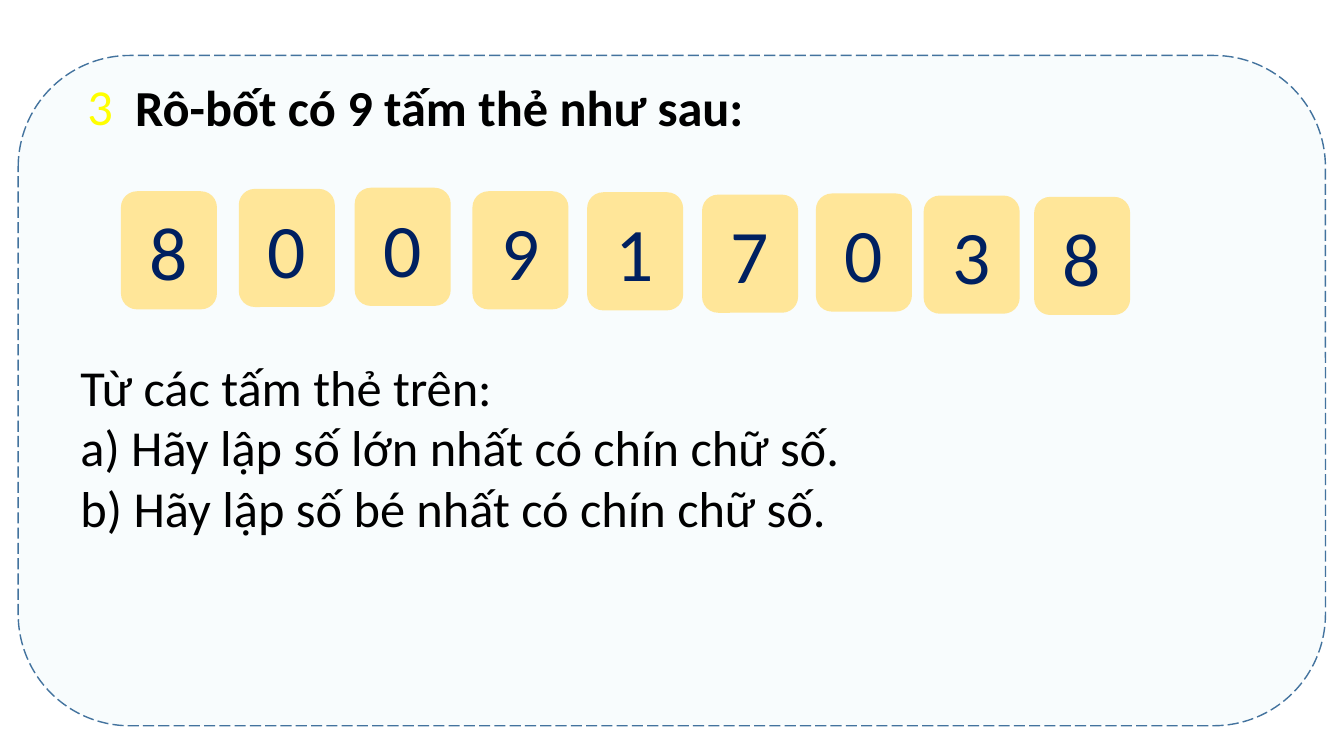
from pptx import Presentation
from pptx.dml.color import RGBColor
from pptx.enum.dml import MSO_LINE
from pptx.enum.shapes import MSO_SHAPE
from pptx.enum.text import MSO_ANCHOR, MSO_AUTO_SIZE, PP_ALIGN
from pptx.util import Pt

FONT = "Calibri"
BLACK = RGBColor(0x00, 0x00, 0x00)
YELLOW = RGBColor(0xFF, 0xFF, 0x00)
NAVY = RGBColor(0x00, 0x20, 0x60)
SAND = RGBColor(0xFF, 0xE6, 0x99)
PALE = RGBColor(0xF8, 0xFC, 0xFD)
BLUE = RGBColor(0x43, 0x73, 0x9E)

CARD_WIDTH, CARD_HEIGHT = 68.6, 84.4
# Digit, left and top of each card
CARDS = [
    ("8", 86.4, 136.6), ("0", 170.6, 134.9), ("0", 253.4, 134.1),
    ("9", 337.5, 136.6), ("1", 419.4, 137.3), ("7", 501.5, 139),
    ("0", 582.8, 138.2), ("3", 659.8, 139.7), ("8", 738.7, 140.6),
]
QUESTIONS = [
    "Từ các tấm thẻ trên:",
    "a) Hãy lập số lớn nhất có chín chữ số.",
    "b) Hãy lập số bé nhất có chín chữ số.",
]


def write(shape, lines, size, color, align, anchor=MSO_ANCHOR.TOP, bold=False):
    frame = shape.text_frame
    frame.text = "\n".join(lines)
    frame.word_wrap = True
    frame.auto_size = MSO_AUTO_SIZE.NONE
    frame.vertical_anchor = anchor
    for para in frame.paragraphs:
        para.alignment = align
        para.font.name = FONT
        para.font.size = Pt(size)
        para.font.bold = bold
        para.font.color.rgb = color


def add_rounded(page, left, top, width, height, fill):
    shape = page.shapes.add_shape(
        MSO_SHAPE.ROUNDED_RECTANGLE, Pt(left), Pt(top), Pt(width), Pt(height))
    shape.shadow.inherit = False
    shape.fill.solid()
    shape.fill.fore_color.rgb = fill
    shape.line.fill.background()
    return shape


def add_panel(page):
    panel = add_rounded(page, 13, 39.6, 933.8, 478.8, PALE)
    panel.line.color.rgb = BLUE
    panel.line.width = Pt(1)
    panel.line.dash_style = MSO_LINE.LONG_DASH
    return panel


def place_title(page, panel, text):
    """Format the title and bring it in front of the panel."""
    title = page.shapes.title
    title.left, title.top = Pt(89.3), Pt(51.1)
    title.width, title.height = Pt(832.3), Pt(51.1)
    write(title, [text], 36, BLACK, PP_ALIGN.LEFT, bold=True)
    panel.element.addnext(title.element)


def add_text(page, left, top, width, height, lines, color):
    box = page.shapes.add_textbox(Pt(left), Pt(top), Pt(width), Pt(height))
    write(box, lines, 36, color, PP_ALIGN.JUSTIFY)


def add_card(page, digit, left, top):
    card = add_rounded(page, left, top, CARD_WIDTH, CARD_HEIGHT, SAND)
    write(card, [digit], 54, NAVY, PP_ALIGN.CENTER, MSO_ANCHOR.MIDDLE)


def main():
    deck = Presentation()
    deck.slide_width, deck.slide_height = Pt(960), Pt(540)
    page = deck.slides.add_slide(deck.slide_layouts.get_by_name("Title Only"))

    panel = add_panel(page)
    place_title(page, panel, "Rô-bốt có 9 tấm thẻ như sau:")
    add_text(page, 55.4, 50.4, 52.6, 52.6, ["3"], YELLOW)
    for digit, left, top in CARDS:
        add_card(page, digit, left, top)
    add_text(page, 50.4, 250.6, 789.8, 138.2, QUESTIONS, BLACK)

    deck.save("out.pptx")


if __name__ == "__main__":
    main()
